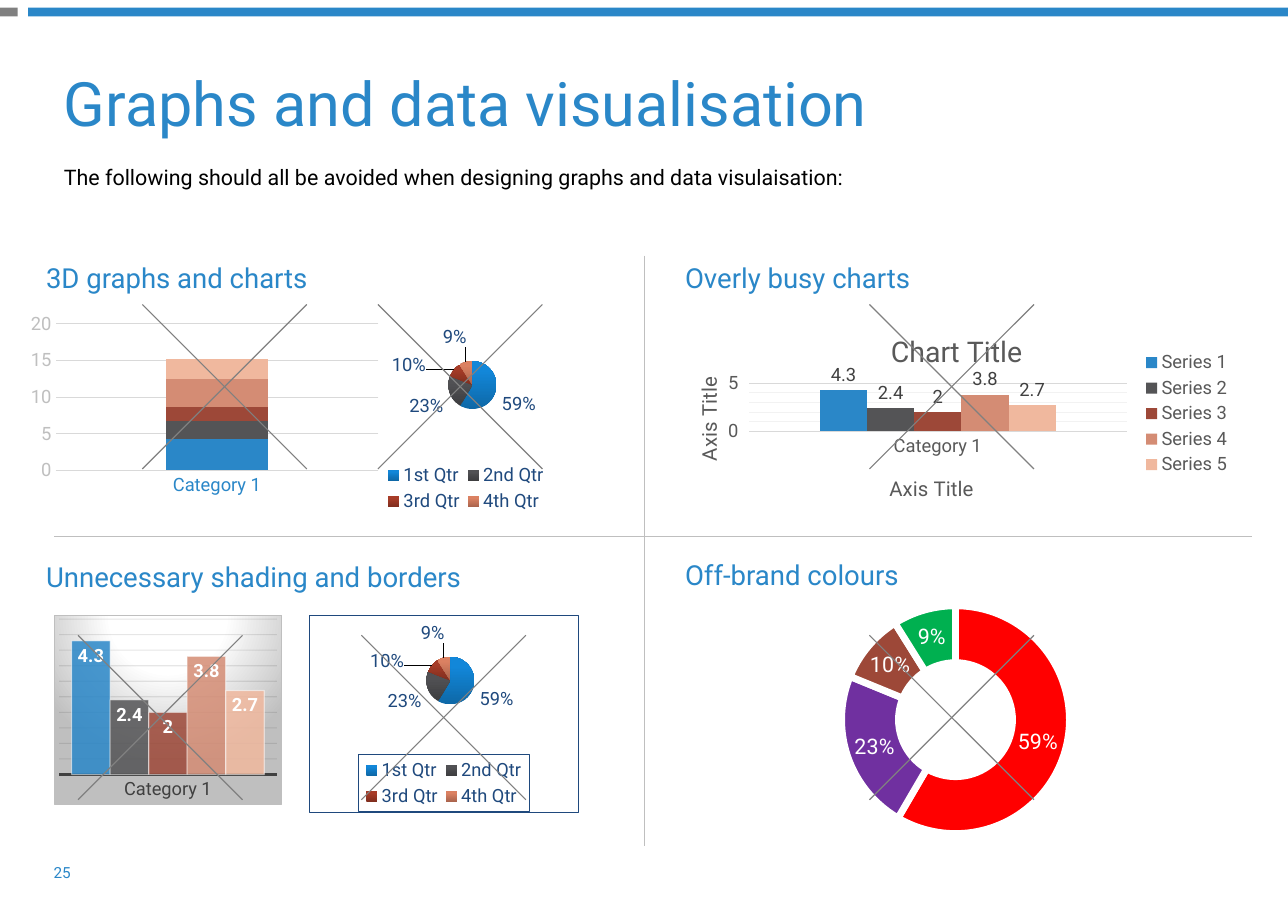
import pptx
import pptx.chart.data
import pptx.dml.color
import pptx.enum.chart
import pptx.enum.shapes
import pptx.enum.text
import pptx.oxml
import pptx.oxml.ns
import pptx.util

Pt = pptx.util.Pt
qn = pptx.oxml.ns.qn
rgb = pptx.dml.color.RGBColor.from_string
XL = pptx.enum.chart.XL_CHART_TYPE
POS = pptx.enum.chart.XL_LABEL_POSITION
TICK = pptx.enum.chart.XL_TICK_MARK
ALIGN = pptx.enum.text.PP_ALIGN
SHAPE = pptx.enum.shapes.MSO_SHAPE
NS = pptx.oxml.ns.nsdecls("c", "a")


class Theme:
    font = "Roboto"
    blue, navy, black, white = "2A87C8", "1F497D", "000000", "FFFFFF"
    grey, silver, pale, faint = "808080", "BFBFBF", "D9D9D9", "F2F2F2"
    dark, text, ink = "404040", "595959", "0D0D0D"
    series = ["2A87C8", "545456", "9D4838", "D48C74", "F0B89E"]
    quarters = [("0E68A7", "1287D9"), ("3E3E40", "515154"), ("802E1E", "A73C28"), ("A9634C", "DB8162")]
    off_brand = ["FF0000", "7030A0", "9D4838", "00B050"]
    title, heading, body, label, page = 40, 18, 14, 12, 10
    chart_title, axis_title = 18.6, 13.3


def place(holder, x, y, w=None, h=None):
    """Put a manual layout, in fractions of the chart, on a chart part."""
    old = holder.find(qn("c:layout"))
    if old is not None:
        holder.remove(old)
    parts = '<c:layoutTarget val="inner"/>' if holder.tag == qn("c:plotArea") else ""
    if holder.tag != qn("c:dLbl"):
        parts += '<c:xMode val="edge"/><c:yMode val="edge"/>'
    sizes = [("x", x), ("y", y), ("w", w), ("h", h)]
    parts += "".join(f'<c:{n} val="{v}"/>' for n, v in sizes if v is not None)
    leading = sum(holder.find(qn(t)) is not None for t in ("c:idx", "c:tx", "c:legendPos"))
    holder.insert(leading, pptx.oxml.parse_xml(
        f"<c:layout {NS}><c:manualLayout>{parts}</c:manualLayout></c:layout>"))


def add_chart(kind, box, data, plot_box, fill="<a:noFill/>", border="<a:noFill/>"):
    chart = s.shapes.add_chart(kind, *map(Pt, box), data).chart
    chart.has_title = chart.has_legend = False
    chart.font.name, chart.font.size = Theme.font, Pt(Theme.label)
    place(chart._chartSpace.chart.plotArea, *plot_box)
    c = chart._chartSpace.chart
    c.addnext(pptx.oxml.parse_xml(
        f'<c:spPr {NS}>{fill}<a:ln w="9525">{border}</a:ln></c:spPr>'))
    if chart._chartSpace.find(qn("c:roundedCorners")) is None:
        c.addprevious(pptx.oxml.parse_xml(f'<c:roundedCorners {NS} val="0"/>'))
    return chart


prs = pptx.Presentation()
prs.slide_width, prs.slide_height = Pt(841.7), Pt(595.4)
s = prs.slides.add_slide(prs.slide_layouts[5])

# Top bars and page number
for shape, box, colour in [(SHAPE.RECTANGLE, (18.4, 5, 823.3, 5.8), Theme.blue),
                           (SHAPE.RECTANGLE, (0, 5, 11.5, 5.8), Theme.grey),
                           (SHAPE.OVAL, (29.5, 558.7, 22.3, 22.3), Theme.white)]:
    sp = s.shapes.add_shape(shape, *map(Pt, box))
    sp.shadow.inherit = False
    sp.fill.solid()
    sp.fill.fore_color.rgb = rgb(colour)
    sp.line.fill.background()
tf = sp.text_frame
tf.margin_left = tf.margin_right = tf.margin_top = tf.margin_bottom = 0
tf.vertical_anchor = pptx.enum.text.MSO_ANCHOR.MIDDLE

# Title, introduction and headings
title = s.shapes.title
title.left, title.top, title.width, title.height = map(Pt, (34.6, 35.3, 777.6, 62.6))
texts = [(sp, "25", Theme.page, Theme.blue, ALIGN.CENTER),
         (title, "Graphs and data visualisation", Theme.title, Theme.blue, ALIGN.JUSTIFY)]
for x, y, w, text, size, colour in [
        (34.6, 103.7, 790, "The following should all be avoided when designing graphs and data visulaisation:",
         Theme.body, Theme.black),
        (23, 167, 400, "3D graphs and charts", Theme.heading, Theme.blue),
        (23, 362.2, 400, "Unnecessary shading and borders", Theme.heading, Theme.blue),
        (440.6, 167, 400, "Overly busy charts", Theme.heading, Theme.blue),
        (440.6, 361.4, 400, "Off-brand colours", Theme.heading, Theme.blue)]:
    box = s.shapes.add_textbox(Pt(x), Pt(y), Pt(w), Pt(35.3))
    box.text_frame.word_wrap = True
    texts.append((box, text, size, colour, ALIGN.LEFT))
for box, text, size, colour, align in texts:
    p = box.text_frame.paragraphs[0]
    p.alignment = align
    r = p.add_run()
    r.text = text
    r.font.name, r.font.size, r.font.color.rgb = Theme.font, Pt(size), rgb(colour)

# Column charts: stacked, shaded, busy
columns = pptx.chart.data.CategoryChartData()
columns.categories = ["Category 1"]
for i, value in enumerate([4.3, 2.4, 2, 3.8, 2.7], 1):
    columns.add_series(f"Series {i}", [value])
spot = (f'<a:gradFill><a:gsLst><a:gs pos="0"><a:srgbClr val="{Theme.white}"/></a:gs>'
        f'<a:gs pos="39000"><a:srgbClr val="{Theme.white}"/></a:gs>'
        f'<a:gs pos="100000"><a:srgbClr val="{Theme.silver}"/></a:gs></a:gsLst>'
        '<a:path path="circle"><a:fillToRect l="50000" t="-80000" r="50000" b="180000"/></a:path></a:gradFill>')
edge = '<a:solidFill><a:srgbClr val="{}"/></a:solidFill>'
stacked = add_chart(XL.COLUMN_STACKED, (15.1, 201.6, 236.9, 124.6), columns, (0.09, 0.08, 0.89, 0.77))
shaded = add_chart(XL.COLUMN_CLUSTERED, (35.3, 401.8, 149, 124.6), columns, (0.02, 0.02, 0.96, 0.82),
                   spot, edge.format(Theme.silver))
busy = add_chart(XL.COLUMN_CLUSTERED, (432.7, 201.6, 379.4, 136.1), columns, (0.15, 0.36, 0.65, 0.23))
for chart, gap, top, step, cat_colour, val_colour, base, base_width, grid, label_pos, label_colour in [
        (stacked, 219, 20, 5, Theme.blue, Theme.silver, Theme.pale, 0.75, Theme.pale, None, None),
        (shaded, 65, 5, 0.5, Theme.dark, Theme.dark, Theme.dark, 1.5, Theme.ink, POS.INSIDE_END, Theme.white),
        (busy, 300, 5, 5, Theme.text, Theme.text, Theme.pale, 0.75, Theme.pale, POS.OUTSIDE_END, Theme.dark)]:
    cat, val, plot = chart.category_axis, chart.value_axis, chart.plots[0]
    plot.gap_width, plot.overlap = gap, 100 if chart is stacked else 0
    plot.vary_by_categories = False
    val.minimum_scale, val.maximum_scale, val.major_unit = 0, top, step
    cat.major_tick_mark = val.major_tick_mark = TICK.NONE
    for axis, colour in ((cat, cat_colour), (val, val_colour)):
        font = axis.tick_labels.font
        font.name, font.size, font.color.rgb = Theme.font, Pt(Theme.label), rgb(colour)
    cat.format.line.color.rgb, cat.format.line.width = rgb(base), Pt(base_width)
    val.format.line.fill.background()
    line = val.major_gridlines.format.line
    line.color.rgb, line.width = rgb(grid), Pt(0.75)
    for series, colour in zip(plot.series, Theme.series):
        series.format.fill.solid()
        series.format.fill.fore_color.rgb = rgb(colour)
        if label_pos is not None:
            labels = series.data_labels
            labels.show_value, labels.position = True, label_pos
            font = labels.font
            font.name, font.size, font.color.rgb = Theme.font, Pt(Theme.label), rgb(label_colour)
            font.bold = chart is shaded

shaded.value_axis.visible = False
faded = [(shaded.value_axis.major_gridlines.format.line.color, 10)]
for series in shaded.plots[0].series:
    line = series.format.line
    line.color.rgb, line.width = rgb(Theme.white), Pt(0.75)
    faded += [(series.format.fill.fore_color, 85), (line.color, 50)]
for colour, percent in faded:
    colour._xFill.find(qn("a:srgbClr")).append(
        pptx.oxml.parse_xml(f'<a:alpha {NS} val="{percent * 1000}"/>'))

val = busy.value_axis
val.major_tick_mark = TICK.OUTSIDE
val.has_minor_gridlines, val.minor_unit = True, 1
val._element.find(qn("c:minorGridlines")).append(pptx.oxml.parse_xml(
    f'<c:spPr {NS}><a:ln w="9525">{edge.format(Theme.faint)}</a:ln></c:spPr>'))
for holder, text, size, x, y in [
        (busy.chart_title, "Chart Title", Theme.chart_title, 0.385, 0.09),
        (busy.category_axis.axis_title, "Axis Title", Theme.axis_title, 0.385, 0.78),
        (val.axis_title, "Axis Title", Theme.axis_title, 0.05, 0.31)]:
    r = holder.text_frame.paragraphs[0].add_run()
    r.text = text
    r.font.name, r.font.size, r.font.bold = Theme.font, Pt(size), False
    r.font.color.rgb = rgb(Theme.text)
    place(holder._element, x, y)
body = val.axis_title._element.find(".//" + qn("a:bodyPr"))
body.set("rot", "-5400000")
body.set("vert", "horz")

# Pies and doughnut
rounds = []
for kind, box, plot_box, cats, border in [
        (XL.PIE, (216, 208.8, 177.1, 129.6), (0.435, 0.21, 0.177, 0.242),
         ["1st Qtr", "2nd Qtr", "3rd Qtr", "4th Qtr"], "<a:noFill/>"),
        (XL.PIE, (201.6, 401.8, 177.1, 129.6), (0.435, 0.21, 0.177, 0.242),
         ["1st Qtr", "2nd Qtr", "3rd Qtr", "4th Qtr"], edge.format(Theme.navy)),
        (XL.DOUGHNUT, (465.1, 386.6, 319, 168.5), (0.266, 0.055, 0.467, 0.885), list("1234"), "<a:noFill/>")]:
    shares = pptx.chart.data.CategoryChartData(number_format='0"%"')
    shares.categories = cats
    shares.add_series("Series 1", [59, 23, 10, 9])
    chart = add_chart(kind, box, shares, plot_box, border=border)
    rounds.append(chart)
    pie = kind == XL.PIE
    series = chart.plots[0].series[0]
    labels = series.data_labels
    labels.show_value = True
    fonts = [labels.font]
    for i in range(4):
        point = series.points[i].format
        if pie:
            point.fill.gradient()
            point.fill.gradient_angle = 90
            for stop, colour, position in zip(point.fill.gradient_stops, Theme.quarters[i], (0, 0.8)):
                stop.color.rgb, stop.position = rgb(colour), position
        else:
            point.fill.solid()
            point.fill.fore_color.rgb = rgb(Theme.off_brand[i])
            point.line.color.rgb, point.line.width = rgb(Theme.white), Pt(4.5)
    if pie:
        labels.position = POS.OUTSIDE_END
        for i in (2, 3):
            label = series.points[i].data_label
            label.position = POS.OUTSIDE_END
            fonts.append(label.font)
        for holder, shift in zip(labels._element.findall(qn("c:dLbl")), [(-0.085, 0.055), (0.01, -0.04)]):
            place(holder, *shift)
    for font in fonts:
        font.name, font.size = Theme.font, Pt(Theme.label if pie else Theme.body)
        font.color.rgb = rgb(Theme.navy if pie else Theme.white)

# Legends
LEGEND = pptx.enum.chart.XL_LEGEND_POSITION
for chart, side, colour, box in [(rounds[0], LEGEND.BOTTOM, Theme.navy, (0.183, 0.707, 0.633, 0.29)),
                                 (rounds[1], LEGEND.BOTTOM, Theme.navy, (0.183, 0.707, 0.633, 0.29)),
                                 (busy, LEGEND.RIGHT, Theme.text, (0.826, 0.19, 0.155, 0.63))]:
    chart.has_legend = True
    legend = chart.legend
    legend.position, legend.include_in_layout = side, False
    legend.font.name, legend.font.size, legend.font.color.rgb = Theme.font, Pt(Theme.label), rgb(colour)
    place(legend._element, *box)
rounds[1].legend._element.find(qn("c:overlay")).addnext(pptx.oxml.parse_xml(
    f'<c:spPr {NS}><a:ln w="9525">{edge.format(Theme.navy)}</a:ln></c:spPr>'))

# Quadrant dividers and crosses
lines = [(421.2, 167, 421.2, 553, Theme.silver), (35.3, 350.6, 817.9, 350.6, Theme.silver)]
side = 107.5
for x, y in [(93, 199), (247, 199), (236.2, 415.2), (51, 415.2), (568.2, 199), (568.2, 415.2)]:
    lines += [(x, y, x + side, y + side, Theme.grey), (x, y + side, x + side, y, Theme.grey)]
for *ends, colour in lines:
    line = s.shapes.add_connector(pptx.enum.shapes.MSO_CONNECTOR.STRAIGHT, *map(Pt, ends))
    line.line.color.rgb, line.line.width = rgb(colour), Pt(0.75)
    line._element.spPr.append(pptx.oxml.parse_xml(f"<a:effectLst {NS}/>"))

prs.save("out.pptx")
